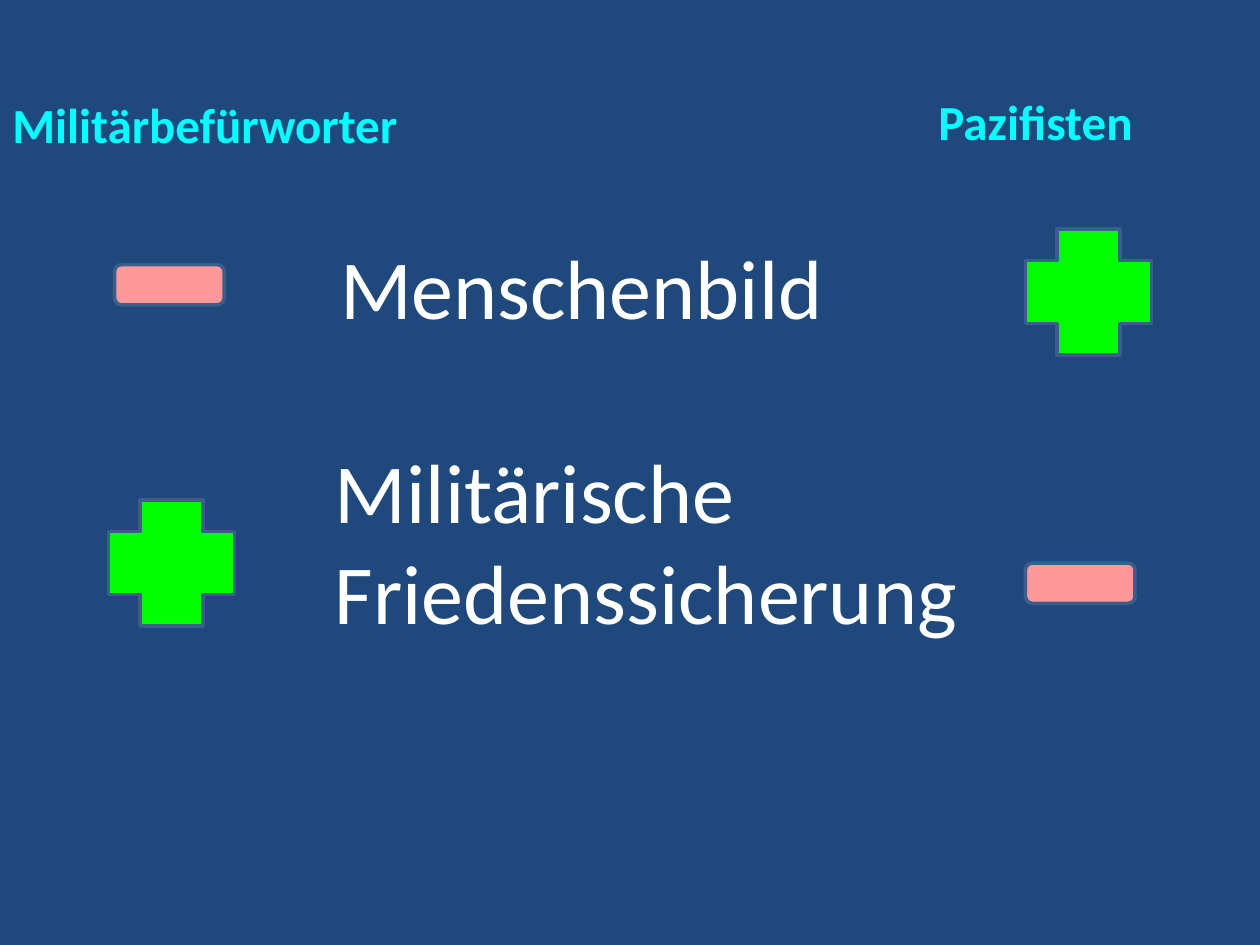
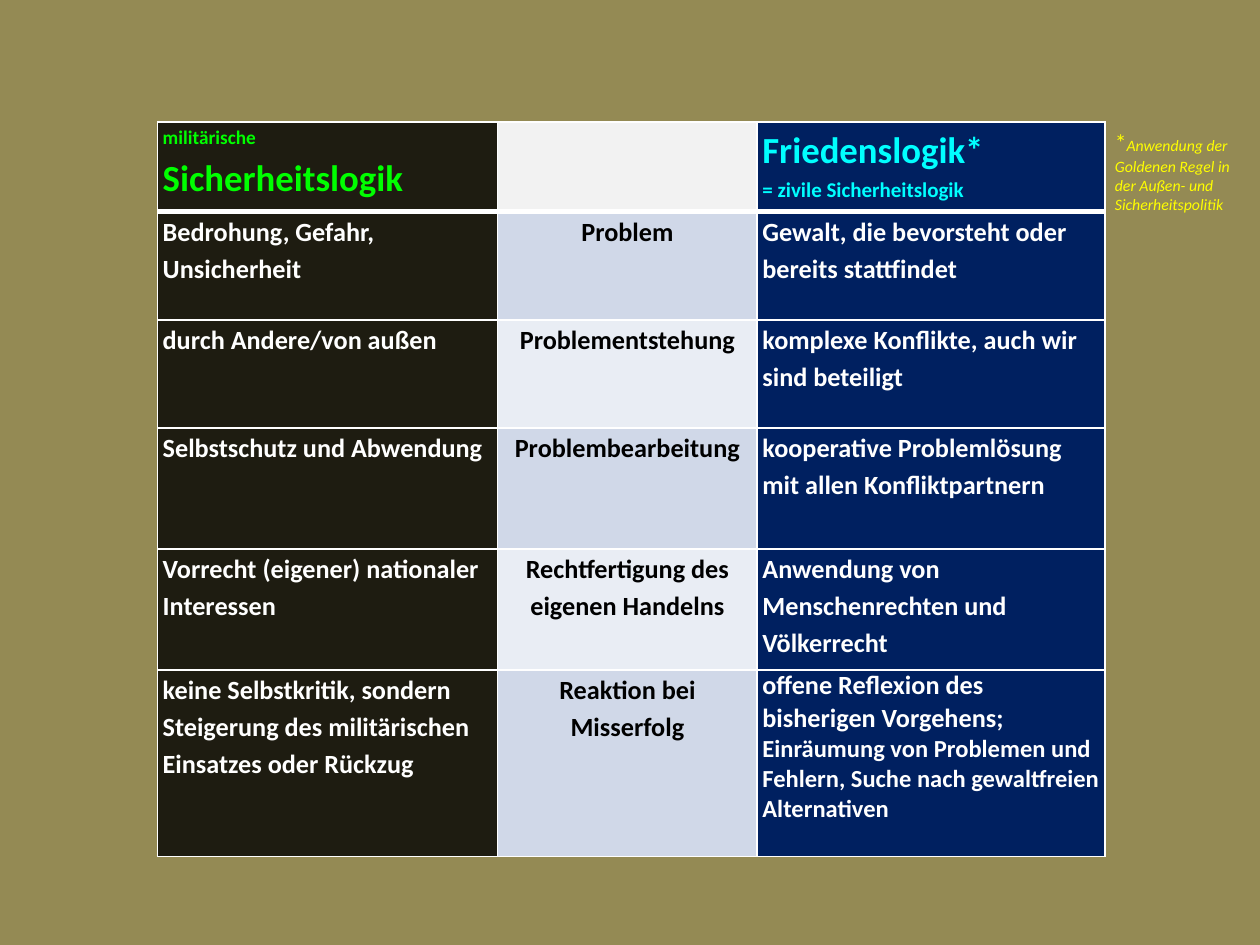
from dataclasses import dataclass

from lxml import etree
from pptx import Presentation
from pptx import util as u
from pptx.dml.color import RGBColor
from pptx.enum import shapes, text
from pptx.oxml.ns import qn


@dataclass(frozen=True)
class Theme:
    """Colours and type sizes of the presentation."""
    font: str = "Calibri"
    blue: str = "1F497D"
    olive: str = "948A54"
    white: str = "FFFFFF"
    black: str = "000000"
    cyan: str = "00FFFF"
    green: str = "00FF00"
    yellow: str = "FFFF00"
    pink: str = "FF9999"
    outline: str = "3A5F8C"
    security: str = "1E1C11"
    peace: str = "002060"
    blank: str = "F2F2F2"
    bands: tuple = ("D0D8E8", "E9EDF4")
    topic: float = 48
    camp: float = 28
    head: float = 21
    body: float = 15
    dense: float = 14
    asterisk: float = 13.5
    subhead: float = 12
    prefix: float = 11
    note: float = 9


THEME = Theme()
COLUMNS = (194.4, 148.3, 198.7)
ROWS = (51.1, 61.9, 61.9, 69.1, 69.1, 106.6)
HEADERS = (
    [[("militärische", THEME.prefix)], [("Sicherheitslogik", THEME.head)]],
    [],
    [[("Friedenslogik*", THEME.head)], [("= zivile Sicherheitslogik", THEME.subhead)]],
)
COMPARISON = (
    ("Bedrohung, Gefahr, Unsicherheit", "Problem",
     "Gewalt, die bevorsteht oder bereits stattfindet"),
    ("durch Andere/von außen", "Problementstehung",
     "komplexe Konflikte, auch wir sind beteiligt"),
    ("Selbstschutz und Abwendung", "Problembearbeitung",
     "kooperative Problemlösung\nmit allen Konfliktpartnern"),
    ("Vorrecht (eigener) nationaler Interessen", "Rechtfertigung des eigenen Handelns",
     "Anwendung von Menschenrechten und Völkerrecht"),
    ("keine Selbstkritik, sondern Steigerung des militärischen Einsatzes oder Rückzug",
     "Reaktion bei Misserfolg",
     [[("offene Reflexion des bisherigen Vorgehens; ", THEME.body),
       ("Einräumung von Problemen und Fehlern, Suche nach gewaltfreien Alternativen",
        THEME.dense)]]),
)


def set_format(target, values):
    """Set every attribute named in a dict of values."""
    for name, value in values.items():
        setattr(target, name, value)


def fill_solid(fill, color):
    """Give a fill one plain colour."""
    fill.solid()
    fill.fore_color.rgb = RGBColor.from_string(color)


def add_slide(presentation, background):
    """Add a blank slide with a coloured background."""
    slide = presentation.slides.add_slide(presentation.slide_layouts[6])
    fill_solid(slide.background.fill, background)
    return slide


def write(frame, paragraphs, color, paragraph_format=None, **font_format):
    """Write paragraphs, each a list of (text, size) runs."""
    for index, runs in enumerate(paragraphs):
        paragraph = frame.add_paragraph() if index else frame.paragraphs[0]
        set_format(paragraph, paragraph_format or {})
        for content, size in runs:
            run = paragraph.add_run()
            run.text = content
            set_format(run.font, {"name": THEME.font, "size": u.Pt(size), **font_format})
            run.font.color.rgb = RGBColor.from_string(color)


def add_label(slide, box, paragraphs, color, **font_format):
    """Add a wrapping text box."""
    frame = slide.shapes.add_textbox(*map(u.Pt, box)).text_frame
    frame.word_wrap = True
    write(frame, paragraphs, color, **font_format)
    return frame


def add_sign(slide, kind, left, top, width, height, color):
    """Add an outlined plus or minus sign."""
    shape = slide.shapes.add_shape(kind, *map(u.Pt, (left, top, width, height)))
    shape.shadow.inherit = False
    fill_solid(shape.fill, color)
    fill_solid(shape.line.fill, THEME.outline)
    shape.line.width = u.Pt(2)


def add_plus(slide, left, top):
    """Add a green plus sign."""
    add_sign(slide, shapes.MSO_SHAPE.CROSS, left, top, 72, 72, THEME.green)


def add_minus(slide, left, top):
    """Add a pink minus sign."""
    add_sign(slide, shapes.MSO_SHAPE.ROUNDED_RECTANGLE, left, top, 62.6, 23, THEME.pink)


def add_borders(cell, **widths):
    """Draw white cell borders with the given widths per side."""
    properties = cell._tc.get_or_add_tcPr()
    for index, side in enumerate("LRTB"):
        width = u.Pt(widths.get(side, 1))
        line = etree.Element(qn(f"a:ln{side}"), w=str(int(width)))
        fill = etree.SubElement(line, qn("a:solidFill"))
        etree.SubElement(fill, qn("a:srgbClr"), val=THEME.white)
        properties.insert(index, line)


def format_cell(cell, paragraphs, fill, color, centred=False, spacing=1.15):
    """Fill one table cell with bold text."""
    set_format(cell, {"margin_left": u.Pt(3), "margin_right": u.Pt(3),
                      "margin_top": 0, "margin_bottom": 0})
    fill_solid(cell.fill, fill)
    alignment = text.PP_ALIGN.CENTER if centred else text.PP_ALIGN.LEFT
    write(cell.text_frame, paragraphs, color,
          {"alignment": alignment, "line_spacing": spacing}, bold=True)


def add_comparison(slide, left, top):
    """Add the table that compares the two logics."""
    table = slide.shapes.add_table(len(ROWS), len(COLUMNS), u.Pt(left), u.Pt(top),
                                   u.Pt(sum(COLUMNS)), u.Pt(sum(ROWS))).table
    for column, width in zip(table.columns, COLUMNS):
        column.width = u.Pt(width)
    for row, height in zip(table.rows, ROWS):
        row.height = u.Pt(height)

    header_fills = (THEME.security, THEME.blank, THEME.peace)
    header_colors = (THEME.green, THEME.black, THEME.cyan)
    for column, paragraphs in enumerate(HEADERS):
        cell = table.cell(0, column)
        format_cell(cell, paragraphs, header_fills[column], header_colors[column])
        add_borders(cell, B=3)

    for row, contents in enumerate(COMPARISON, 1):
        fills = (THEME.security, THEME.bands[(row - 1) % 2], THEME.peace)
        for column, content in enumerate(contents):
            cell, centred, plain = table.cell(row, column), column == 1, isinstance(content, str)
            paragraphs = ([[(line, THEME.body)] for line in content.split("\n")]
                          if plain else content)
            format_cell(cell, paragraphs, fills[column],
                        THEME.black if centred else THEME.white,
                        centred, 1.15 if plain else 1.0)
            add_borders(cell, T=3 if row == 1 else 1)


def build_camps(presentation):
    """Build the slide that sets the two camps side by side."""
    slide = add_slide(presentation, THEME.blue)
    for box, lines in (((187.2, 131, 326, 73), ["Menschenbild"]),
                       ((184.3, 247.7, 374, 181), ["Militärische", "Friedenssicherung"])):
        add_label(slide, box, [[(line, THEME.topic)] for line in lines], THEME.white)
    add_plus(slide, 586, 131)
    add_plus(slide, 62, 285.8)
    add_minus(slide, 65.5, 151.2)
    add_minus(slide, 586, 321.8)
    for box, camp in (((0, 50.4, 238, 41), "Militärbefürworter"),
                      ((529.2, 49, 160.6, 41), "Pazifisten")):
        add_label(slide, box, [[(camp, THEME.camp)]], THEME.cyan, bold=True)


def build_logics(presentation):
    """Build the slide that compares security logic and peace logic."""
    slide = add_slide(presentation, THEME.olive)
    add_comparison(slide, 90, 69.8)
    frame = add_label(slide, (630, 69.8, 80.6, 56.2), [[("*", THEME.asterisk)]], THEME.yellow)
    run = frame.paragraphs[0].add_run()
    run.text = "Anwendung der Goldenen Regel in der Außen- und Sicherheitspolitik"
    set_format(run.font, {"name": THEME.font, "size": u.Pt(THEME.note), "italic": True})
    run.font.color.rgb = RGBColor.from_string(THEME.yellow)


def main():
    """Build and save the presentation."""
    presentation = Presentation()
    set_format(presentation, {"slide_width": u.Pt(720), "slide_height": u.Pt(540)})
    build_camps(presentation)
    build_logics(presentation)
    presentation.save("out.pptx")


if __name__ == "__main__":
    main()
